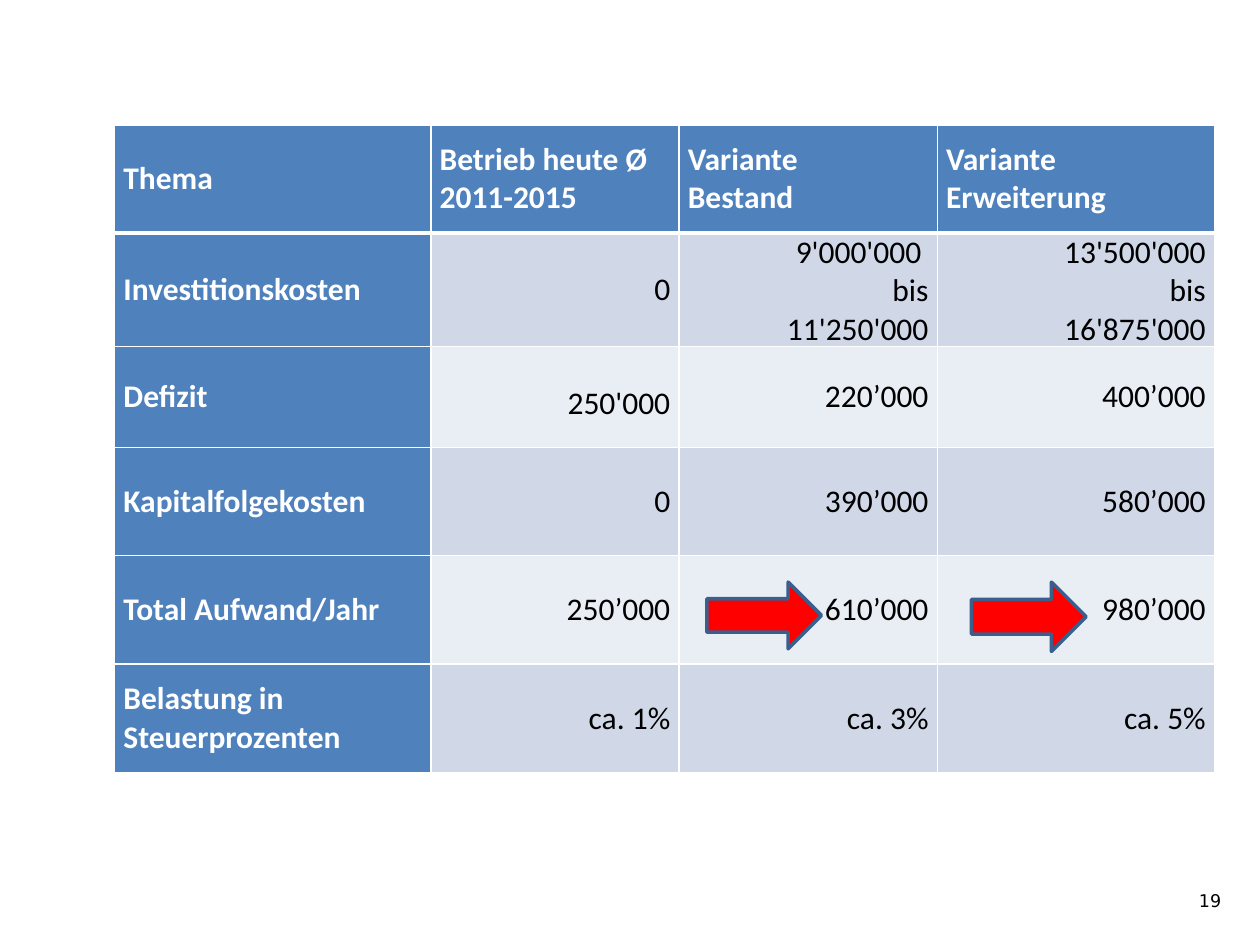
import dataclasses

import pptx
import pptx.util
import pptx.dml.color
import pptx.enum.shapes
import pptx.enum.text
import pptx.oxml.ns
import lxml.etree

Inches = pptx.util.Inches
ALIGN = pptx.enum.text.PP_ALIGN
ANCHOR = pptx.enum.text.MSO_ANCHOR

COLORS = {"head": "4F81BD", "odd": "D0D8E8", "even": "E9EDF4", "white": "FFFFFF",
          "black": "000000", "red": "FF0000", "edge": "3A5F8C"}
WIDTHS = [2.51, 1.97, 2.05, 2.2]
HEIGHTS = [0.86, 0.86, 0.8, 0.86, 0.86, 0.86]
ROWS = [
    ["Thema", "Betrieb heute Ø 2011-2015", "Variante \vBestand", "Variante Erweiterung"],
    ["Investitionskosten", "0", "9'000'000 \nbis\n11'250'000", "13'500'000\nbis\n16'875'000"],
    ["Defizit", "250'000", "220’000", "400’000"],
    ["Kapitalfolgekosten", "0", "390’000", "580’000"],
    ["Total Aufwand/Jahr", "250’000", "610’000", "980’000"],
    ["Belastung in Steuerprozenten", "ca. 1%", "ca. 3%", "ca. 5%"],
]
LOW = (2, 1)  # the one cell set from the top, one line down


@dataclasses.dataclass
class Arrow:
    left: float
    top: float
    width: float
    height: float


ARROWS = [Arrow(5.61, 4.62, 0.91, 0.53), Arrow(7.71, 4.62, 0.91, 0.55)]


def color(name: str) -> pptx.dml.color.RGBColor:
    return pptx.dml.color.RGBColor.from_string(COLORS[name])


def write(frame, text: str, *, size=18, font="Calibri", ink="black", bold=False,
          align=ALIGN.RIGHT) -> None:
    """Fill a text frame, one paragraph per line of text."""
    frame.text = text
    frame.word_wrap = True
    for para in frame.paragraphs:
        para.alignment = align
        for run in para.runs:
            run.font.size = pptx.util.Pt(size)
            run.font.name = font
            run.font.bold = bold
            run.font.color.rgb = color(ink)


def edge(cell, side: str, width: float) -> None:
    """Add one white cell border; call before the fill is set."""
    qn = pptx.oxml.ns.qn
    props = cell._tc.get_or_add_tcPr()
    line = lxml.etree.SubElement(props, qn(f"a:ln{side}"), w=str(pptx.util.Pt(width)))
    fill = lxml.etree.SubElement(line, qn("a:solidFill"))
    lxml.etree.SubElement(fill, qn("a:srgbClr"), val=COLORS["white"])


def draw_cell(cell, row: int, col: int) -> None:
    title = row == 0 or col == 0
    write(cell.text_frame, ROWS[row][col], bold=title,
          ink="white" if title else "black",
          align=ALIGN.LEFT if title else ALIGN.RIGHT)
    low = (row, col) == LOW
    cell.vertical_anchor = ANCHOR.TOP if low else ANCHOR.MIDDLE
    cell.margin_left = cell.margin_right = Inches(0.07)
    cell.margin_top = Inches(0.3 if low else 0)
    cell.margin_bottom = 0
    thick = {"T": row == 1, "B": row == 0}
    for side in "LRTB":
        edge(cell, side, 3 if thick.get(side) else 1)
    cell.fill.solid()
    cell.fill.fore_color.rgb = color("head" if title else "odd" if row % 2 else "even")


def draw_table(slide) -> None:
    table = slide.shapes.add_table(
        len(ROWS), len(WIDTHS), Inches(0.91), Inches(0.99),
        Inches(sum(WIDTHS)), Inches(sum(HEIGHTS))).table
    for col, width in enumerate(WIDTHS):
        table.columns[col].width = Inches(width)
    for row, height in enumerate(HEIGHTS):
        table.rows[row].height = Inches(height)
        for col in range(len(WIDTHS)):
            draw_cell(table.cell(row, col), row, col)


def draw_arrow(slide, arrow: Arrow) -> None:
    shape = slide.shapes.add_shape(
        pptx.enum.shapes.MSO_SHAPE.RIGHT_ARROW,
        *(Inches(n) for n in dataclasses.astuple(arrow)))
    shape.shadow.inherit = False
    shape.fill.solid()
    shape.fill.fore_color.rgb = color("red")
    shape.line.color.rgb = color("edge")
    shape.line.width = pptx.util.Pt(2)


def main() -> None:
    deck = pptx.Presentation()
    deck.slide_width, deck.slide_height = Inches(10), Inches(7.5)
    slide = deck.slides.add_slide(deck.slide_layouts[6])

    # Page number
    page = slide.shapes.add_textbox(Inches(7.46), Inches(6.95), Inches(2.33), Inches(0.4))
    write(page.text_frame, "19", size=10, font="DejaVu Sans")
    page.text_frame.vertical_anchor = ANCHOR.MIDDLE

    # Cost table, with arrows on the totals
    draw_table(slide)
    for arrow in ARROWS:
        draw_arrow(slide, arrow)

    deck.save("out.pptx")


if __name__ == "__main__":
    main()
